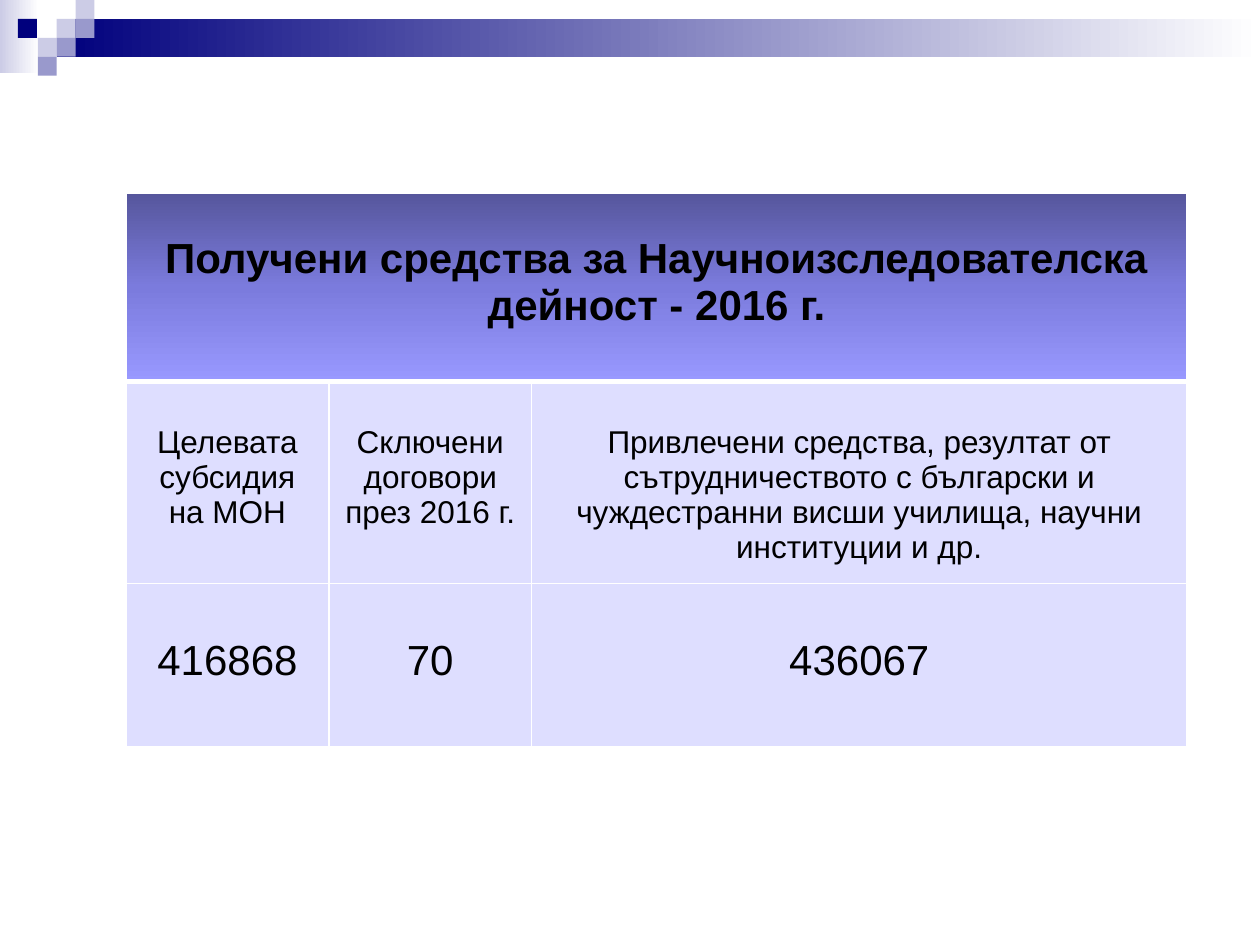
import pptx
import pptx.dml.color
import pptx.enum.shapes
import pptx.enum.text
import pptx.oxml
import pptx.oxml.ns
import pptx.util

Inches = pptx.util.Inches
qn = pptx.oxml.ns.qn

COLORS = {
    "navy": "00007D", "violet": "9999CC", "lilac": "CCCCE6", "white": "FFFFFF",
    "black": "000000", "cell": "DEDEFF",
    "head_top": "56569C", "head_middle": "7B7BDD", "head_bottom": "9999FF",
}
BANDS = [
    ((0, 0, 0.31, 0.58), [(0, "lilac"), (100, "white")]),
    ((0.45, 0.15, 9.55, 0.3), [(0, "navy"), (100, "white")]),
]
SQUARE = 0.15
SQUARES = [
    (3, 1, "lilac"), (4, 0, "lilac"), (4, 1, "violet"), (2, 2, "lilac"),
    (0.95, 1, "navy"), (3, 2, "violet"), (2, 3, "violet"),
]
TITLE = "Получени средства за Научноизследователска дейност - 2016 г."
HEADINGS = [
    "Целевата субсидия на МОН",
    "Сключени договори през 2016 г.",
    "Привлечени средства, резултат от сътрудничеството с български и "
    "чуждестранни висши училища, научни институции и др.",
]
VALUES = ["416868", "70", "436067"]
ROWS = [
    {"texts": [TITLE, "", ""], "height": 1.5, "size": 24, "bold": True, "inset": 0.34},
    {"texts": HEADINGS, "height": 1.6, "size": 18, "bold": False, "inset": 0.34},
    {"texts": VALUES, "height": 1.3, "size": 24, "bold": False, "inset": 0.43},
]
COLUMN_WIDTHS = [1.61, 1.61, 5.2]
TABLE_LEFT, TABLE_TOP = 1, 1.53
HEADER_GRADIENT = [(0, "head_top"), (50, "head_middle"), (100, "head_bottom")]
THIN, THICK = 1, 3


def rgb(name):
    return pptx.dml.color.RGBColor.from_string(COLORS[name])


def fill_solid(fill, color):
    fill.solid()
    fill.fore_color.rgb = rgb(color)


def fill_gradient(fill, properties, stops, angle):
    fill.gradient()
    fill.gradient_angle = angle
    stop_list = properties.find(".//" + qn("a:gsLst"))
    for stop in list(stop_list):
        stop_list.remove(stop)
    for position, color in stops:
        stop = pptx.oxml.parse_xml(
            f'<a:gs {pptx.oxml.ns.nsdecls("a")} pos="{position * 1000}">'
            f'<a:srgbClr val="{COLORS[color]}"/></a:gs>')
        stop_list.append(stop)


def add_rectangle(page, left, top, width, height):
    shape = page.shapes.add_shape(
        pptx.enum.shapes.MSO_SHAPE.RECTANGLE,
        Inches(left), Inches(top), Inches(width), Inches(height))
    shape.shadow.inherit = False
    shape.line.fill.background()
    return shape


def write_text(frame, text, *, size, bold=False, color="black", font="Arial"):
    para = frame.paragraphs[0]
    para.alignment = pptx.enum.text.PP_ALIGN.CENTER
    span = para.add_run()
    span.text = text
    span.font.name = font
    span.font.size = pptx.util.Pt(size)
    span.font.bold = bold
    span.font.color.rgb = rgb(color)


def set_borders(properties, top, bottom):
    widths = {"lnL": THIN, "lnR": THIN, "lnT": top, "lnB": bottom}
    for index, (tag, width) in enumerate(widths.items()):
        border = pptx.oxml.parse_xml(
            f'<a:{tag} {pptx.oxml.ns.nsdecls("a")} w="{pptx.util.Pt(width)}">'
            f'<a:solidFill><a:srgbClr val="{COLORS["white"]}"/></a:solidFill></a:{tag}>')
        properties.insert(index, border)


def add_funding_table(page):
    table = page.shapes.add_table(
        len(ROWS), len(COLUMN_WIDTHS), Inches(TABLE_LEFT), Inches(TABLE_TOP),
        Inches(sum(COLUMN_WIDTHS)), Inches(sum(row["height"] for row in ROWS))).table
    for column, width in zip(table.columns, COLUMN_WIDTHS):
        column.width = Inches(width)
    table.cell(0, 0).merge(table.cell(0, len(COLUMN_WIDTHS) - 1))
    for row_index, row in enumerate(ROWS):
        table.rows[row_index].height = Inches(row["height"])
        for column_index, text in enumerate(row["texts"]):
            cell = table.cell(row_index, column_index)
            cell.margin_top = Inches(row["inset"])
            properties = cell.fill and cell._tc.get_or_add_tcPr()
            if row_index == 0:
                fill_gradient(cell.fill, properties, HEADER_GRADIENT, 270)
            else:
                fill_solid(cell.fill, "cell")
            set_borders(properties, THICK if row_index == 1 else THIN,
                        THICK if row_index == 0 else THIN)
            if text:
                write_text(cell.text_frame, text, size=row["size"], bold=row["bold"])


def main():
    deck = pptx.Presentation()
    deck.slide_width, deck.slide_height = Inches(10), Inches(7.5)
    page = deck.slides.add_slide(deck.slide_layouts[6])
    fill_solid(page.background.fill, "white")
    for place, stops in BANDS:
        band = add_rectangle(page, *place)
        fill_gradient(band.fill, band.element.spPr, stops, 0)
    for column, row, color in SQUARES:
        square = add_rectangle(page, column * SQUARE, row * SQUARE, SQUARE, SQUARE)
        fill_solid(square.fill, color)
    add_funding_table(page)
    deck.save("out.pptx")


if __name__ == "__main__":
    main()
